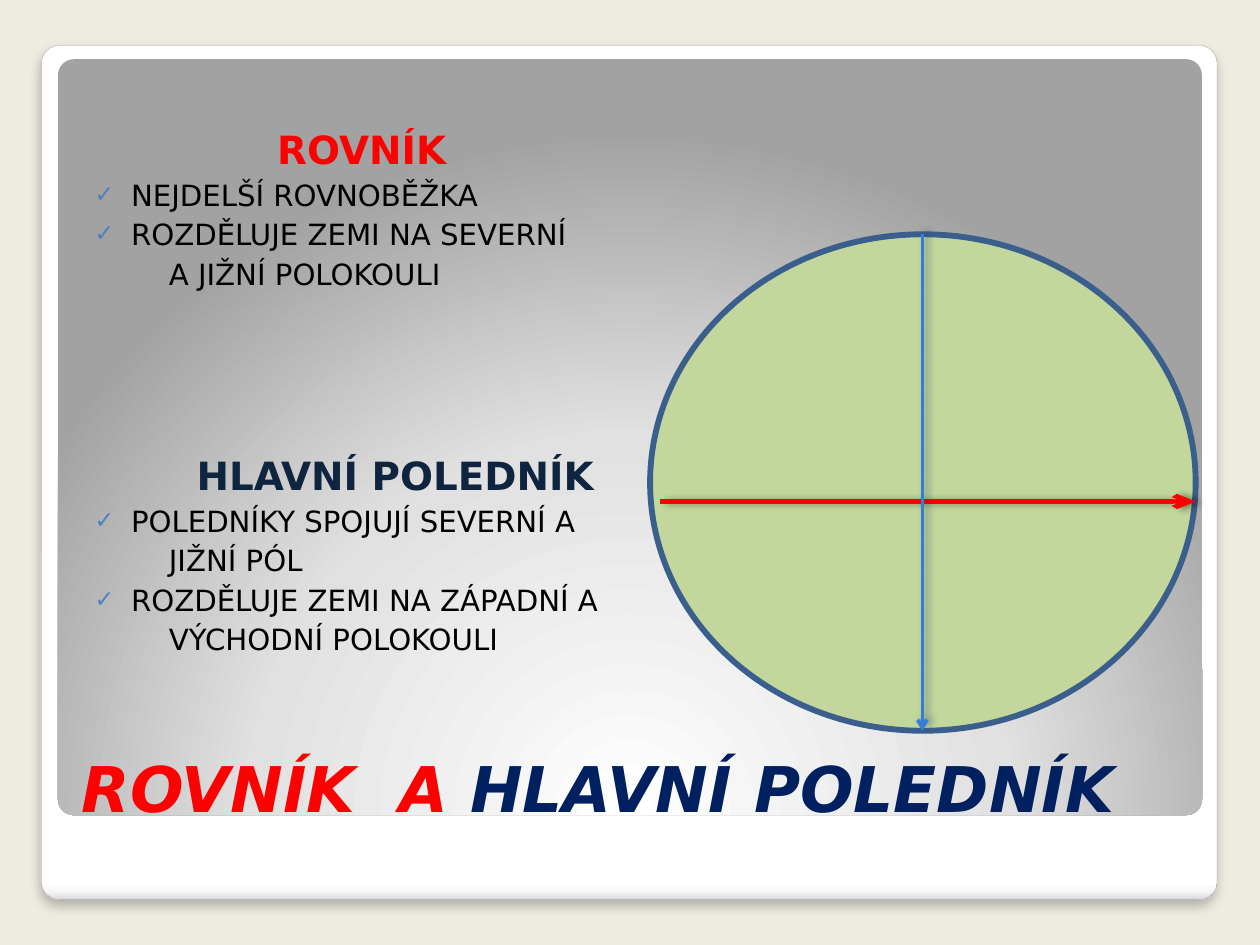
from lxml.etree import SubElement
from pptx import Presentation
from pptx.dml.color import RGBColor
from pptx.enum.shapes import MSO_CONNECTOR, MSO_SHAPE
from pptx.enum.text import MSO_ANCHOR, PP_ALIGN
from pptx.oxml import parse_xml
from pptx.oxml.ns import nsdecls, qn
from pptx.util import Emu, Pt

FONT = "DejaVu Sans"
RED, NAVY, BLACK = "FF0000", "0F243E", "000000"
TEXT_INDENT, WRAPPED_INDENT = 29, 59
HEADING_SIZE, FACT_SIZE, LINE_GAP = 22.2, 16.7, 2.5


def px(length):
    """100 px to the inch."""
    return Emu(length * 9144)


def color(value):
    return RGBColor.from_string(value)


def format_span(span, size, value, bold=False, italic=False):
    font = span.font
    font.name, font.size, font.bold, font.italic = FONT, Pt(size), bold, italic
    font.color.rgb = color(value)


def set_gradient(shape, stops, direction):
    stop_xml = "".join(
        f'<a:gs pos="{place * 1000}"><a:srgbClr val="{value}"/></a:gs>' for place, value in stops)
    gradient = parse_xml(
        f'<a:gradFill {nsdecls("a")} rotWithShape="1"><a:gsLst>{stop_xml}</a:gsLst>{direction}</a:gradFill>')
    shape.fill.background()
    properties = shape._element.spPr
    properties.replace(properties.find(qn("a:noFill")), gradient)


def set_shadow(shape, value, alpha, blur, distance, angle):
    properties = shape._element.spPr
    for effects in properties.findall(qn("a:effectLst")):
        properties.remove(effects)
    properties.append(parse_xml(
        f'<a:effectLst {nsdecls("a")}><a:outerShdw blurRad="{Pt(blur)}" dist="{Pt(distance)}" '
        f'dir="{angle * 60000}" algn="ctr" rotWithShape="0"><a:srgbClr val="{value}">'
        f'<a:alpha val="{alpha * 1000}"/></a:srgbClr></a:outerShdw></a:effectLst>'))


def add_panel(page, box, stops, direction):
    panel = page.shapes.add_shape(MSO_SHAPE.ROUNDED_RECTANGLE, *map(px, box))
    panel.adjustments[0] = 0.021
    panel.shadow.inherit = False
    panel.line.fill.background()
    set_gradient(panel, stops, direction)
    return panel


def add_frame(page, box):
    left, top, width, height = box
    card = add_panel(page, box, [(0, "FFFFFF"), (98, "FFFFFF"), (99, "F7F7F7"), (100, "DADADA")],
                     '<a:lin ang="5400000" scaled="0"/>')
    card.line.color.rgb = color("A4A4A4")
    card.line.width = Pt(0.16)
    set_shadow(card, "000000", 25, 6, 4, 90)
    add_panel(page, (left + 13, top + 11, width - 25, height - 78),
              [(0, "FFFFFF"), (55, "E1E1E1"), (100, "A2A2A2")],
              '<a:path path="circle"><a:fillToRect l="50000" t="175000" r="50000" b="-75000"/></a:path>')


def place_title(page, box):
    title = page.shapes.title
    page.shapes._spTree.append(title._element)
    title.left, title.top, title.width, title.height = map(px, box)
    frame = title.text_frame
    frame.vertical_anchor = MSO_ANCHOR.BOTTOM
    para = frame.paragraphs[0]
    para.alignment = PP_ALIGN.LEFT
    for words, value in (("ROVNÍK  A ", RED), ("HLAVNÍ POLEDNÍK", "002060")):
        span = para.add_run()
        span.text = words
        format_span(span, 36, value, bold=True, italic=True)


def add_bullet(para):
    properties = para._p.get_or_add_pPr()
    properties.set("indent", str(-px(TEXT_INDENT)))
    SubElement(SubElement(properties, qn("a:buClr")), qn("a:srgbClr")).set("val", "4F81BD")
    SubElement(properties, qn("a:buSzPct")).set("val", "80000")
    SubElement(properties, qn("a:buFont")).set("typeface", FONT)
    SubElement(properties, qn("a:buChar")).set("char", "✓")


def add_facts(page, box, sections):
    frame = page.shapes.add_textbox(*map(px, box)).text_frame
    frame.word_wrap = True
    frame.margin_left, frame.margin_top, frame.margin_right, frame.margin_bottom = map(px, (20, 42, 10, 5))

    def add_line(words, indent, gap, size, value, bold=False):
        para = frame.paragraphs[0] if not frame.text else frame.add_paragraph()
        para.text = words
        para.space_before = Pt(gap)
        para._p.get_or_add_pPr().set("marL", str(px(indent)))
        format_span(para.runs[0], size, value, bold)
        return para

    for heading, value, indent, gap, facts in sections:
        add_line(heading, indent, gap, HEADING_SIZE, value, bold=True)
        for first, *wrapped in facts:
            add_bullet(add_line(first, TEXT_INDENT, LINE_GAP, FACT_SIZE, BLACK))
            for words in wrapped:
                add_line(words, WRAPPED_INDENT, LINE_GAP, FACT_SIZE, BLACK)


def add_arrow(page, start, end, value, width, head_length, shadow):
    arrow = page.shapes.add_connector(MSO_CONNECTOR.STRAIGHT, *map(px, start + end))
    arrow.line.color.rgb = color(value)
    arrow.line.width = Pt(width)
    head = SubElement(arrow.line._get_or_add_ln(), qn("a:tailEnd"))
    head.set("type", "arrow")
    head.set("len", head_length)
    set_shadow(arrow, *shadow)


def add_globe(page, box):
    left, top, width, height = box
    globe = page.shapes.add_shape(MSO_SHAPE.OVAL, *map(px, box))
    globe.shadow.inherit = False
    globe.fill.solid()
    globe.fill.fore_color.rgb = color("C3D69B")
    globe.line.color.rgb = color("3A5F8C")
    globe.line.width = Pt(3.35)
    equator, meridian = top + 212, left + 216
    add_arrow(page, (left + 8, equator), (left + width, equator), RED, 2.5, "lg",
              ("000000", 40, 4, 3, 0))
    add_arrow(page, (meridian, top), (meridian, top + height), "337ED9", 2, "med",
              ("17375E", 40, 4, 3, 315))


def main():
    deck = Presentation()
    deck.slide_width, deck.slide_height = px(1000), px(750)
    page = deck.slides.add_slide(deck.slide_layouts[5])
    page.background.fill.solid()
    page.background.fill.fore_color.rgb = color("EEECE1")
    add_frame(page, (33, 36, 933, 678))
    place_title(page, (55, 545, 895, 115))
    add_facts(page, (55, 58, 895, 458), [
        ("ROVNÍK", RED, 145, LINE_GAP,
         [("NEJDELŠÍ ROVNOBĚŽKA",),
          ("ROZDĚLUJE ZEMI NA SEVERNÍ", "A JIŽNÍ POLOKOULI")]),
        ("HLAVNÍ POLEDNÍK", NAVY, 81, 92,
         [("POLEDNÍKY SPOJUJÍ SEVERNÍ A", "JIŽNÍ PÓL"),
          ("ROZDĚLUJE ZEMI NA ZÁPADNÍ A", "VÝCHODNÍ POLOKOULI")]),
    ])
    add_globe(page, (516, 186, 433, 394))
    deck.save("out.pptx")


if __name__ == "__main__":
    main()
